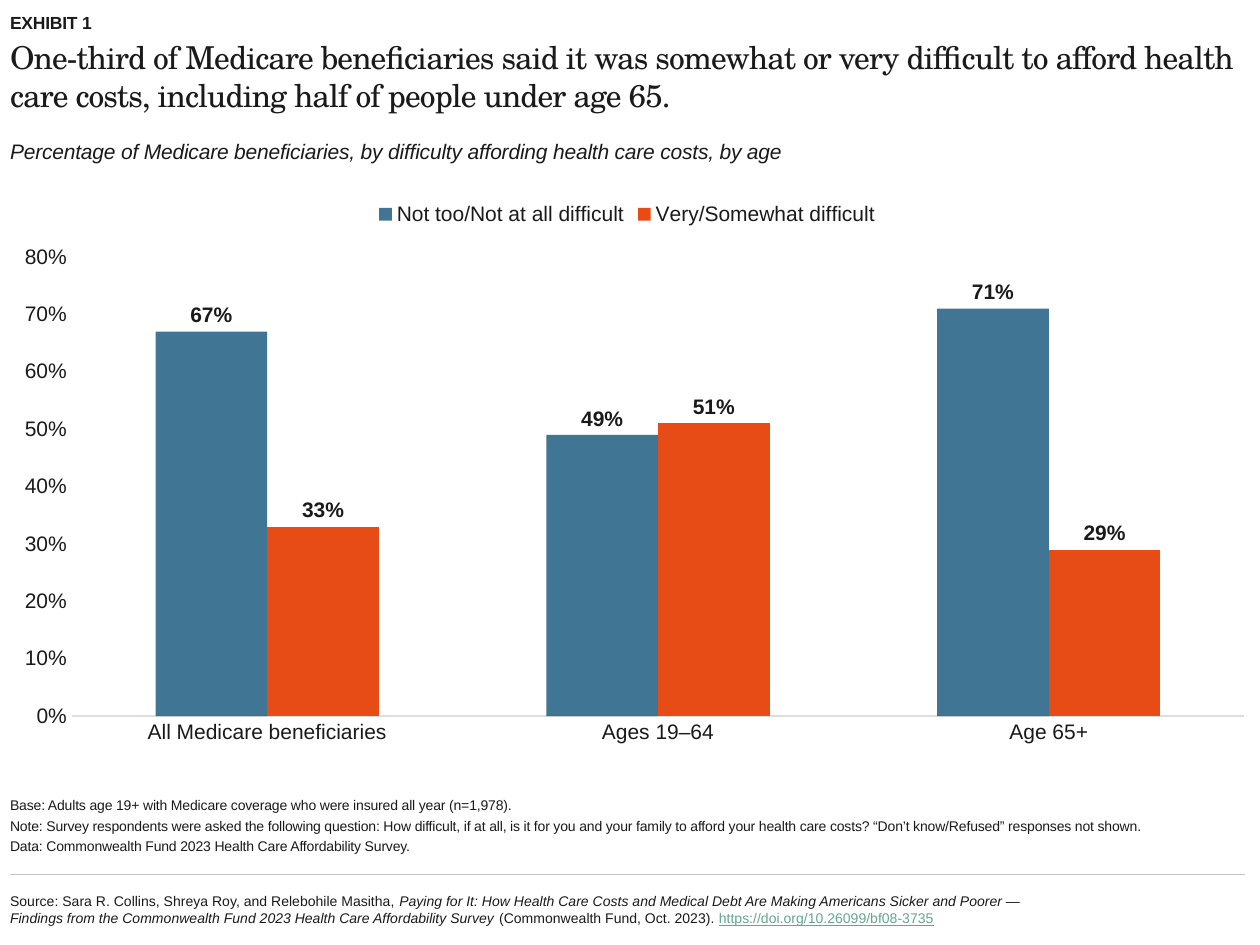
"""Build the slide on how hard Medicare beneficiaries find health care costs."""
from dataclasses import dataclass

from lxml import etree
from pptx import Presentation
from pptx.chart.data import CategoryChartData
from pptx.dml.color import RGBColor
from pptx.enum import chart as ch, shapes, text
from pptx.oxml import parse_xml
from pptx.oxml.ns import nsdecls, qn
from pptx.util import Pt


@dataclass(frozen=True)
class Theme:
    sans: str = "Arial"
    serif: str = "TeX Gyre Schola"
    ink: str = "1A1A1A"
    link: str = "65A591"
    blue: str = "115479"
    red: str = "E74C16"
    rule: str = "C6C6C6"
    axis: str = "DDDDDD"
    head: float = 18
    mid: float = 12
    tag: float = 10
    note: float = 8


@dataclass(frozen=True)
class Box:
    x: float
    y: float
    w: float
    h: float

    def pts(self) -> list:
        return [Pt(v) for v in (self.x, self.y, self.w, self.h)]


@dataclass(frozen=True)
class Span:
    words: str
    size: float
    face: str = Theme.sans
    color: str = Theme.ink
    bold: bool = False
    slant: bool = False
    line: bool = False
    track: int = 0


@dataclass(frozen=True)
class Bars:
    name: str
    vals: tuple
    color: str
    alpha: int = 100


T = Theme()
LEFT, WIDE = 5.76, 705.6
CATS = ("All Medicare beneficiaries", "Ages 19–64", "Age 65+")
BARS = (
    Bars("Not too/Not at all difficult", (0.67, 0.49, 0.71), T.blue, 80),
    Bars("Very/Somewhat difficult", (0.33, 0.51, 0.29), T.red),
)
NOTES = (
    "Base: Adults age 19+ with Medicare coverage who were insured all year (n=1,978).",
    "Note: Survey respondents were asked the following question: How difficult, if at all, is it for you "
    "and your family to afford your health care costs? “Don’t know/Refused” responses not shown.",
    "Data: Commonwealth Fund 2023 Health Care Affordability Survey.",
)
SOURCE = (
    Span("Source: Sara R. Collins, Shreya Roy, and Relebohile Masitha, ", T.note),
    Span("Paying for It: How Health Care Costs and Medical Debt Are Making Americans Sicker and Poorer — "
         "Findings from the Commonwealth Fund 2023 Health Care Affordability Survey", T.note, slant=True),
    Span(" (Commonwealth Fund, Oct. 2023). ", T.note),
    Span("https://doi.org/10.26099/bf08-3735", T.note, color=T.link, line=True),
)


def style(font, size: float, face: str = T.sans, color: str = T.ink, bold: bool = False) -> None:
    """Set the size, face, colour and weight of a font."""
    font.size, font.name, font.bold = Pt(size), face, bold
    font.color.rgb = RGBColor.from_string(color)


def write(shape, box: Box, paras: list, anchor=text.MSO_ANCHOR.TOP, after: float = 0) -> None:
    """Place a text shape and fill it with paragraphs of spans."""
    shape.left, shape.top, shape.width, shape.height = box.pts()
    frame = shape.text_frame
    frame.word_wrap, frame.auto_size = True, text.MSO_AUTO_SIZE.NONE
    frame.vertical_anchor = anchor
    frame.margin_left = frame.margin_right = frame.margin_top = frame.margin_bottom = 0
    for i, spans in enumerate(paras):
        para = frame.paragraphs[0] if i == 0 else frame.add_paragraph()
        props = para._p.get_or_add_pPr()
        props.set("marL", "0")
        props.set("indent", "0")
        etree.SubElement(props, qn("a:buNone"))
        para.alignment = text.PP_ALIGN.LEFT
        para.space_before, para.space_after = Pt(0), Pt(after)
        for span in spans:
            run = para.add_run()
            run.text = span.words
            style(run.font, span.size, span.face, span.color, span.bold)
            run.font.italic, run.font.underline = span.slant, span.line
            if span.track:
                run._r.get_or_add_rPr().set("spc", str(span.track))


def plot(slide, box: Box) -> None:
    """Draw the clustered column chart."""
    data = CategoryChartData(number_format="0%")
    data.categories = CATS
    for bars in BARS:
        data.add_series(bars.name, bars.vals)
    chart = slide.shapes.add_chart(ch.XL_CHART_TYPE.COLUMN_CLUSTERED, *box.pts(), data).chart
    style(chart.font, T.tag)
    chart.has_title = False
    chart.has_legend = True
    chart.legend.position = ch.XL_LEGEND_POSITION.TOP
    chart.legend.include_in_layout = False
    style(chart.legend.font, T.mid)
    for axis in (chart.category_axis, chart.value_axis):
        axis.has_major_gridlines = False
        axis.major_tick_mark = axis.minor_tick_mark = ch.XL_TICK_MARK.NONE
        style(axis.tick_labels.font, T.mid)
    base, scale = chart.category_axis.format.line, chart.value_axis
    base.color.rgb, base.width = RGBColor.from_string(T.axis), Pt(0.75)
    scale.format.line.fill.background()
    scale.minimum_scale, scale.maximum_scale, scale.major_unit = 0, 0.8, 0.1
    scale.tick_labels.number_format = "0%"
    scale.tick_labels.number_format_is_linked = False
    group = chart.plots[0]
    group.gap_width, group.overlap, group.vary_by_categories = 150, 0, False
    for series, bars in zip(group.series, BARS):
        fill = series.format.fill
        fill.solid()
        fill.fore_color.rgb = RGBColor.from_string(bars.color)
        if bars.alpha < 100:
            tint = next(series._element.iter(qn("a:srgbClr")))
            etree.SubElement(tint, qn("a:alpha")).set("val", str(bars.alpha * 1000))
        tags = series.data_labels
        tags.show_value = True
        tags.number_format, tags.number_format_is_linked = "0%", False
        tags.position = ch.XL_LABEL_POSITION.OUTSIDE_END
        style(tags.font, T.mid, bold=True)
    area = chart._chartSpace.chart.plotArea
    for old in area.findall(qn("c:layout")):
        area.remove(old)
    rows = "".join(f'<c:{k} val="{v}"/>' for k, v in (
        ("layoutTarget", "inner"), ("xMode", "edge"), ("yMode", "edge"),
        ("x", 0.05), ("y", 0.12), ("w", 0.95), ("h", 0.81)))
    area.insert(0, parse_xml(
        f'<c:layout {nsdecls("c")}><c:manualLayout>{rows}</c:manualLayout></c:layout>'))


def rule(slide, y: float) -> None:
    """Draw the thin line above the source."""
    line = slide.shapes.add_connector(
        shapes.MSO_CONNECTOR.STRAIGHT, Pt(LEFT + WIDE), Pt(y), Pt(LEFT), Pt(y))
    line.line.color.rgb, line.line.width = RGBColor.from_string(T.rule), Pt(0.75)
    etree.SubElement(line._element.spPr, qn("a:effectLst"))


def main() -> None:
    """Build and save the slide."""
    deck = Presentation()
    deck.slide_width, deck.slide_height = Pt(720), Pt(540)
    slide = deck.slides.add_slide(deck.slide_layouts[3])
    title, tag, sub = slide.placeholders
    low, mid = text.MSO_ANCHOR.BOTTOM, text.MSO_ANCHOR.MIDDLE
    write(title, Box(LEFT, 21.6, WIDE, 59.76), [[Span(
        "One-third of Medicare beneficiaries said it was somewhat or very difficult to afford health "
        "care costs, including half of people under age 65.", T.head, T.serif, track=-50)]])
    write(tag, Box(LEFT, 3.6, WIDE, 15.12), [[Span("EXHIBIT 1", T.tag, bold=True, track=-10)]], low)
    write(sub, Box(LEFT, 79.2, WIDE, 18), [[Span(
        "Percentage of Medicare beneficiaries, by difficulty affording health care costs, by age",
        T.mid, slant=True, track=-10)]])
    plot(slide, Box(LEFT, 108, WIDE, 324))
    notes = Box(LEFT, 452.16, WIDE, 36)
    write(slide.shapes.add_textbox(*notes.pts()), notes,
          [[Span(words, T.note, track=-10)] for words in NOTES], low, 2)
    rule(slide, 499.68)
    source = Box(LEFT, 503.28, 586, 33.12)
    write(slide.shapes.add_textbox(*source.pts()), source, [SOURCE], mid)
    deck.save("out.pptx")


if __name__ == "__main__":
    main()
